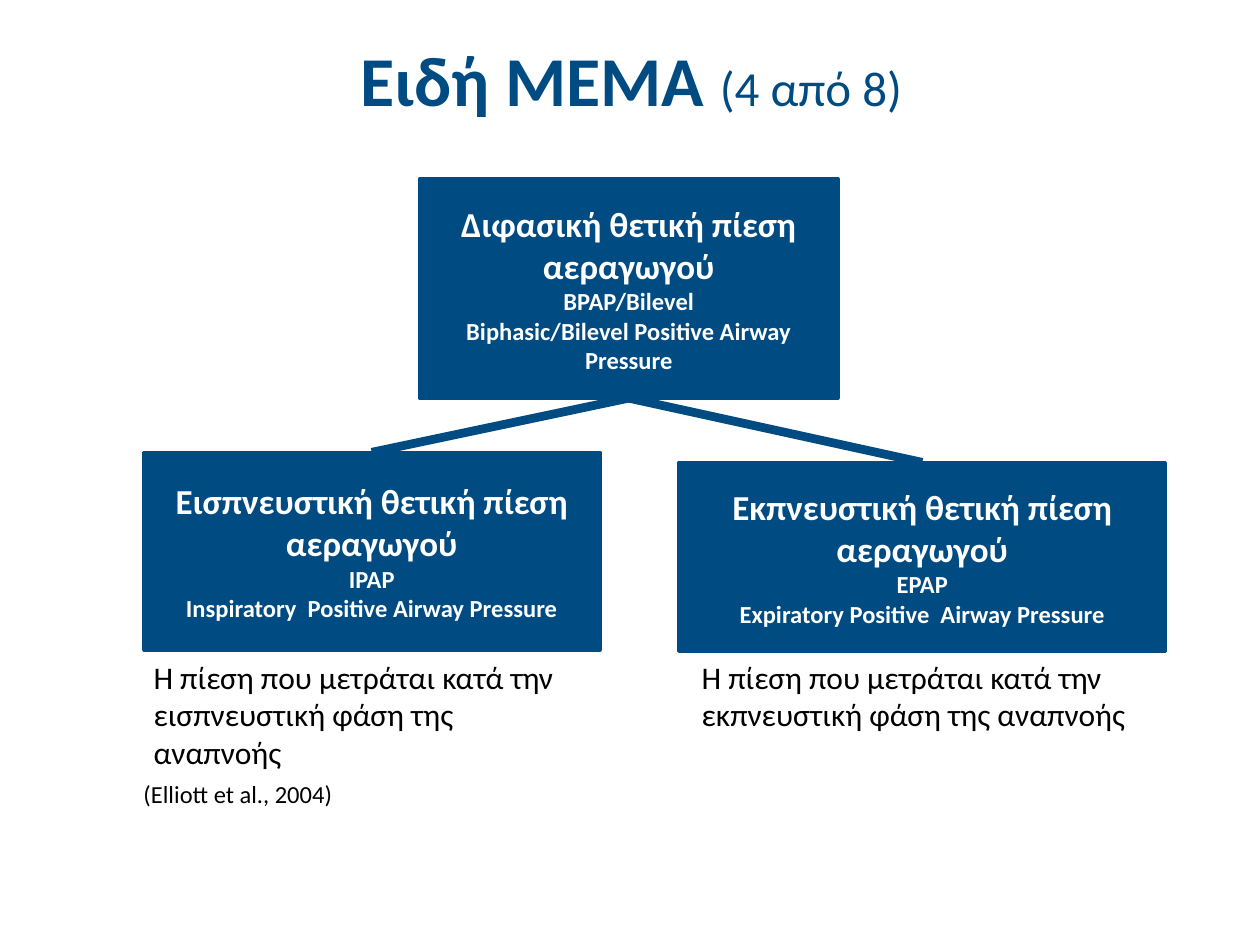
from dataclasses import dataclass

from pptx import Presentation
from pptx import util as u
from pptx.dml.color import RGBColor
from pptx.enum import shapes, text
from pptx.oxml.ns import qn
from lxml import etree

COLORS = {"navy": "004B82", "white": "FFFFFF", "black": "000000"}
FONT = "Calibri"
COLUMNS, ROWS = 100, 75
CELL = u.Inches(0.1)


@dataclass(frozen=True)
class Area:
    """A rectangle in grid columns and rows."""
    left: float
    top: float
    width: float
    height: float

    @property
    def lengths(self) -> list[int]:
        return [cells(n) for n in (self.left, self.top, self.width, self.height)]

    @property
    def top_center(self) -> tuple[float, float]:
        return self.left + self.width / 2, self.top

    @property
    def bottom_center(self) -> tuple[float, float]:
        return self.left + self.width / 2, self.top + self.height


@dataclass(frozen=True)
class PressureBox:
    area: Area
    heading: str
    abbreviation: str
    english: str


@dataclass(frozen=True)
class Note:
    area: Area
    wording: str


PARENT = PressureBox(Area(33.3, 14.2, 33.2, 17.4), "Διφασική θετική πίεση αεραγωγού",
                     "BPAP/Bilevel", "Biphasic/Bilevel Positive Airway Pressure")
CHILDREN = [
    PressureBox(Area(11.4, 35.9, 36.2, 15.7), "Εισπνευστική θετική πίεση αεραγωγού",
                "IPAP", "Inspiratory  Positive Airway Pressure"),
    PressureBox(Area(53.9, 36.7, 38.6, 15), "Εκπνευστική θετική πίεση αεραγωγού",
                "EPAP", "Expiratory Positive  Airway Pressure"),
]
NOTES = [
    Note(Area(11.2, 51.7, 36.2, 10.1),
         "Η πίεση που μετράται κατά την εισπνευστική φάση της αναπνοής"),
    Note(Area(54.7, 51.7, 36.2, 7.1),
         "Η πίεση που μετράται κατά την εκπνευστική φάση της αναπνοής"),
]
TITLE_AREA = Area(5.1, 1.3, 90, 9.9)
CITATION = Note(Area(10.4, 61.9, 33.8, 5.4), "(Elliott et al., 2004)")


def cells(count: float) -> int:
    return round(count * CELL)


def color(name: str) -> RGBColor:
    return RGBColor.from_string(COLORS[name])


def style(font, size: float, color_name: str, bold: bool = False) -> None:
    font.name, font.size, font.bold = FONT, u.Pt(size), bold
    font.color.rgb = color(color_name)


def add_pressure_box(slide, box: PressureBox) -> None:
    shape = slide.shapes.add_shape(shapes.MSO_SHAPE.RECTANGLE, *box.area.lengths)
    shape.shadow.inherit = False
    shape.fill.solid()
    shape.fill.fore_color.rgb = color("navy")
    shape.line.color.rgb = color("navy")
    shape.line.width = u.Pt(2)
    frame = shape.text_frame
    frame.word_wrap = True
    frame.vertical_anchor = text.MSO_ANCHOR.MIDDLE
    frame.text = "\n".join((box.heading, box.abbreviation, box.english))
    for paragraph, size in zip(frame.paragraphs, (20, 14, 14)):
        paragraph.alignment = text.PP_ALIGN.CENTER
        style(paragraph.font, size, "white", bold=True)


def add_branch(slide, parent: PressureBox, child: PressureBox) -> None:
    ends = [cells(n) for n in parent.area.bottom_center + child.area.top_center]
    line = slide.shapes.add_connector(shapes.MSO_CONNECTOR.STRAIGHT, *ends)
    line.line.color.rgb = color("navy")
    line.line.width = u.Pt(5)
    etree.SubElement(line._element.spPr, qn("a:effectLst"))


def add_text_frame(slide, area: Area):
    frame = slide.shapes.add_textbox(*area.lengths).text_frame
    frame.word_wrap = True
    return frame


def add_note(slide, note: Note, size: float):
    paragraph = add_text_frame(slide, note.area).paragraphs[0]
    paragraph.text = note.wording
    style(paragraph.font, size, "black")
    return paragraph


def add_title(slide) -> None:
    frame = add_text_frame(slide, TITLE_AREA)
    frame.vertical_anchor = text.MSO_ANCHOR.MIDDLE
    paragraph = frame.paragraphs[0]
    paragraph.alignment = text.PP_ALIGN.CENTER
    for wording, size, bold in (("Ειδή ΜΕΜΑ ", 40, True), ("(4 από 8)", 28, False)):
        run = paragraph.add_run()
        run.text = wording
        style(run.font, size, "navy", bold)


def main() -> None:
    presentation = Presentation()
    presentation.slide_width, presentation.slide_height = cells(COLUMNS), cells(ROWS)
    slide = presentation.slides.add_slide(presentation.slide_layouts[6])

    # Pressure tree
    for box in (PARENT, *CHILDREN):
        add_pressure_box(slide, box)
    for child in CHILDREN:
        add_branch(slide, PARENT, child)

    # Explanations under the boxes
    for note in NOTES:
        add_note(slide, note, 18)

    add_title(slide)

    # Citation
    citation = add_note(slide, CITATION, 14)
    citation.line_spacing = 0.73
    citation.space_before = u.Pt(3)

    presentation.save("out.pptx")


if __name__ == "__main__":
    main()
